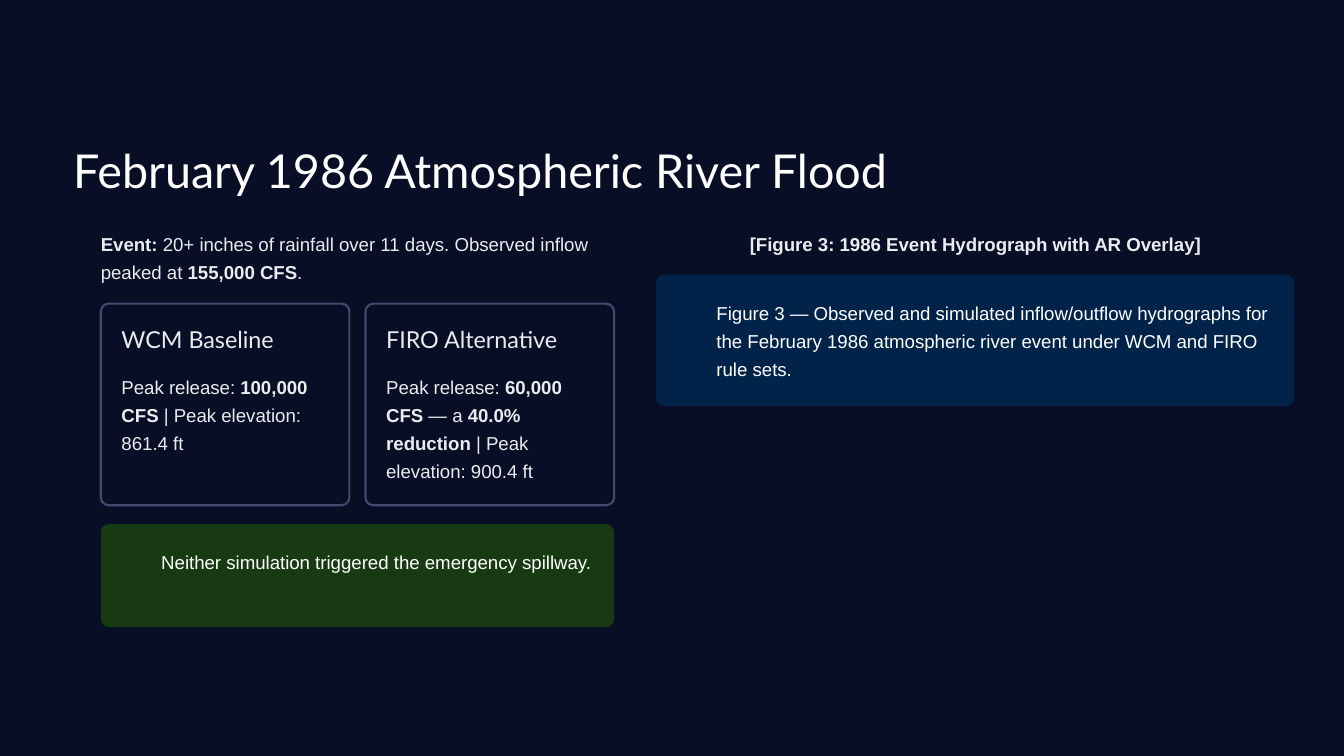
from dataclasses import dataclass

from pptx import Presentation
from pptx.dml.color import RGBColor
from pptx.enum import shapes, text
from pptx.util import Pt

COLORS = {
    "background": "080E26",
    "border": "414A70",
    "success": "183A13",
    "info": "022349",
    "body": "EBECEF",
    "white": "FFFFFF",
}
CORNER_RADIUS = 4.2
LEFT_COLUMN, LEFT_WIDTH = 54, 275
RIGHT_COLUMN, RIGHT_WIDTH = 351.4, 342
COLUMN_TOP = 121.7
CARD_TOP, CARD_WIDTH, CARD_HEIGHT = 162.7, 133.2, 108
CARD_PADDING = 11.1


@dataclass(frozen=True)
class Box:
    left: float
    top: float
    width: float
    height: float


@dataclass(frozen=True)
class TextStyle:
    size: float
    line_height: float
    font: str = "Arial"
    color: str = "body"
    align: text.PP_ALIGN = text.PP_ALIGN.LEFT
    wrap: bool = True


@dataclass(frozen=True)
class Card:
    heading: str
    body: str


@dataclass(frozen=True)
class Callout:
    box: Box
    message: str
    fill: str


TITLE = TextStyle(25, 31, "Lato", "white", wrap=False)
HEADING = TextStyle(12.5, 15.5, "Lato", wrap=False)
BODY = TextStyle(10, 15)
CAPTION = TextStyle(10, 15, align=text.PP_ALIGN.CENTER, wrap=False)
CALLOUT = TextStyle(10, 15, color="white")

CARDS = [
    Card("WCM Baseline",
         "Peak release: **100,000 CFS** | Peak elevation: 861.4 ft"),
    Card("FIRO Alternative",
         "Peak release: **60,000 CFS** — a **40.0% reduction** | Peak elevation: 900.4 ft"),
]
CALLOUTS = [
    Callout(Box(LEFT_COLUMN, 280.8, LEFT_WIDTH, 55.2),
            "Neither simulation triggered the emergency spillway.", "success"),
    Callout(Box(RIGHT_COLUMN, 147.2, RIGHT_WIDTH, 70.4),
            "Figure 3 — Observed and simulated inflow/outflow hydrographs for the "
            "February 1986 atmospheric river event under WCM and FIRO rule sets.", "info"),
]


def rgb(name: str) -> RGBColor:
    return RGBColor.from_string(COLORS[name])


def points(box: Box) -> tuple:
    return Pt(box.left), Pt(box.top), Pt(box.width), Pt(box.height)


def write(frame, content: str, style: TextStyle) -> None:
    """Fill a text frame; parts between ** marks are bold."""
    frame.margin_left = frame.margin_top = frame.margin_right = frame.margin_bottom = 0
    frame.word_wrap = style.wrap
    frame.auto_size = text.MSO_AUTO_SIZE.NONE
    frame.vertical_anchor = text.MSO_ANCHOR.TOP
    paragraph = frame.paragraphs[0]
    paragraph.alignment = style.align
    paragraph.line_spacing = Pt(style.line_height)
    for index, part in enumerate(content.split("**")):
        if part:
            run = paragraph.add_run()
            run.text = part
            run.font.name = style.font
            run.font.size = Pt(style.size)
            run.font.bold = index % 2 == 1
            run.font.color.rgb = rgb(style.color)


def add_text(slide, box: Box, content: str, style: TextStyle) -> None:
    write(slide.shapes.add_textbox(*points(box)).text_frame, content, style)


def add_panel(slide, box: Box, fill: str, border: str = "") -> None:
    panel = slide.shapes.add_shape(shapes.MSO_SHAPE.ROUNDED_RECTANGLE, *points(box))
    panel.adjustments[0] = CORNER_RADIUS / min(box.width, box.height)
    panel.shadow.inherit = False
    panel.fill.solid()
    panel.fill.fore_color.rgb = rgb(fill)
    if border:
        panel.line.color.rgb = rgb(border)
        panel.line.width = Pt(1.13)
    else:
        panel.line.fill.background()


def add_card(slide, left: float, card: Card) -> None:
    add_panel(slide, Box(left, CARD_TOP, CARD_WIDTH, CARD_HEIGHT), "background", "border")
    inner_left, inner_width = left + CARD_PADDING, CARD_WIDTH - 2 * CARD_PADDING
    add_text(slide, Box(inner_left, CARD_TOP + CARD_PADDING, inner_width, 15.5),
             card.heading, HEADING)
    add_text(slide, Box(inner_left, CARD_TOP + 35.5, inner_width, 61), card.body, BODY)


def add_callout(slide, callout: Callout) -> None:
    box = callout.box
    add_panel(slide, box, callout.fill)
    add_text(slide, Box(box.left + 32.4, box.top + 11.3, box.width - 42.4, box.height - 22.6),
             callout.message, CALLOUT)


def main() -> None:
    deck = Presentation()
    deck.slide_width, deck.slide_height = Pt(720), Pt(405)
    slide = deck.slides.add_slide(deck.slide_layouts[5])
    slide.background.fill.solid()
    slide.background.fill.fore_color.rgb = rgb("background")

    title = slide.shapes.title
    title.left, title.top, title.width, title.height = points(Box(39.2, 75, 476.6, 31.5))
    write(title.text_frame, "February 1986 Atmospheric River Flood", TITLE)

    add_text(slide, Box(LEFT_COLUMN, COLUMN_TOP, LEFT_WIDTH, 30),
             "**Event:** 20+ inches of rainfall over 11 days. "
             "Observed inflow peaked at **155,000 CFS**.", BODY)
    card_pitch = LEFT_WIDTH - CARD_WIDTH
    for index, card in enumerate(CARDS):
        add_card(slide, LEFT_COLUMN + index * card_pitch, card)

    add_text(slide, Box(RIGHT_COLUMN, COLUMN_TOP, RIGHT_WIDTH, 15),
             "**[Figure 3: 1986 Event Hydrograph with AR Overlay]**", CAPTION)
    for callout in CALLOUTS:
        add_callout(slide, callout)

    deck.save("out.pptx")


if __name__ == "__main__":
    main()
